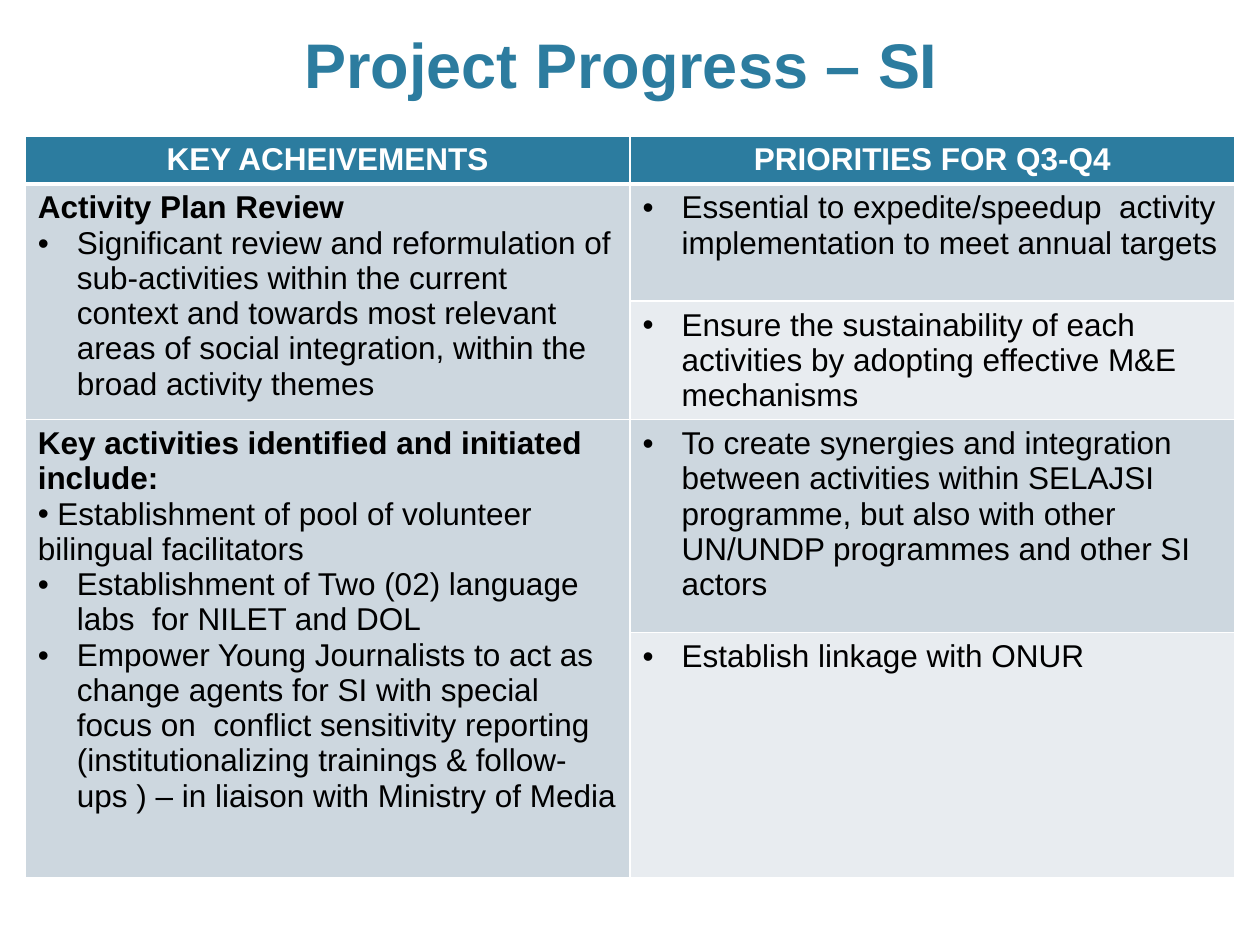
import pptx
import pptx.dml.color
import pptx.enum.text
import pptx.oxml
import pptx.util
from lxml import etree
from pptx.oxml.ns import qn
from pptx.util import Inches

FONT = "Arial"
TEAL, WHITE, BLACK = "2C7C9F", "FFFFFF", "000000"
DARK_BAND, LIGHT_BAND = "CDD7DF", "E8ECF0"
HANGING = 0.31
ALIGN = pptx.enum.text.PP_ALIGN

TITLE = "Project Progress – SI "
HEADINGS = ["KEY ACHEIVEMENTS", "PRIORITIES FOR Q3-Q4"]
ROW_HEIGHTS = [0.37, 0.93, 0.93, 1.69, 1.95]

# Each achievement: bold heading, then (text, hanging indent) bullets
ACHIEVEMENTS = [
    ("Activity Plan Review", [
        ("Significant review and reformulation of sub-activities within the "
         "current context and towards most relevant areas of social "
         "integration, within the broad activity themes", HANGING),
    ]),
    ("Key activities identified and initiated include:", [
        (" Establishment of pool of volunteer bilingual facilitators", 0),
        ("Establishment of Two (02) language labs  for NILET and DOL", HANGING),
        ("Empower Young Journalists to act as change agents for SI with "
         "special focus on  conflict sensitivity reporting (institutionalizing "
         "trainings & follow-ups ) – in liaison with Ministry of Media", HANGING),
    ]),
]
PRIORITIES = [
    "Essential to expedite/speedup  activity implementation to meet annual targets",
    "Ensure the sustainability of each activities by adopting effective M&E mechanisms",
    "To create synergies and integration between activities within SELAJSI "
    "programme, but also with other UN/UNDP programmes and other SI actors",
    "Establish linkage with ONUR",
]


def color(value):
    return pptx.dml.color.RGBColor.from_string(value)


def format_para(para, size, ink, bold, align):
    para.alignment = align
    for span in para.runs:
        span.font.name = FONT
        span.font.size = pptx.util.Pt(size)
        span.font.bold = bold
        span.font.color.rgb = color(ink)


def add_bullet(para, indent):
    props = para._p.get_or_add_pPr()
    props.set("marL", str(Inches(indent)))
    props.set("indent", str(-Inches(indent)))
    etree.SubElement(props, qn("a:buFont")).set("typeface", FONT)
    etree.SubElement(props, qn("a:buChar")).set("char", "•")


def style_cell(cell, fill, bottom_width=1):
    props = cell._tc.get_or_add_tcPr()
    for side in ("L", "R", "T", "B"):
        width = bottom_width if side == "B" else 1
        line = etree.SubElement(props, qn(f"a:ln{side}"))
        line.set("w", str(pptx.util.Pt(width)))
        solid = etree.SubElement(line, qn("a:solidFill"))
        etree.SubElement(solid, qn("a:srgbClr")).set("val", WHITE)
    cell.fill.solid()
    cell.fill.fore_color.rgb = color(fill)


def fill_cell(cell, bullets, heading=None):
    lines = ([(heading, None)] if heading else []) + bullets
    frame = cell.text_frame
    frame.text = "\n".join(text for text, _ in lines)
    for para, (_, indent) in zip(frame.paragraphs, lines):
        is_heading = indent is None
        format_para(para, 18, BLACK, is_heading, ALIGN.LEFT)
        if not is_heading:
            add_bullet(para, indent)


def place_title(page, left, top, width, height):
    box = page.shapes.title
    box.left, box.top = Inches(left), Inches(top)
    box.width, box.height = Inches(width), Inches(height)
    frame = box.text_frame
    frame.text = TITLE
    frame.auto_size = pptx.enum.text.MSO_AUTO_SIZE.NONE
    frame.vertical_anchor = pptx.enum.text.MSO_ANCHOR.BOTTOM
    format_para(frame.paragraphs[0], 36, TEAL, True, ALIGN.CENTER)


def place_progress_table(page, left, top, width):
    table = page.shapes.add_table(
        len(ROW_HEIGHTS), len(HEADINGS), Inches(left), Inches(top),
        Inches(width), Inches(sum(ROW_HEIGHTS))).table
    for row, height in zip(table.rows, ROW_HEIGHTS):
        row.height = Inches(height)

    # Header row
    for column, heading in enumerate(HEADINGS):
        cell = table.cell(0, column)
        style_cell(cell, TEAL, bottom_width=3)
        cell.text_frame.text = heading
        format_para(cell.text_frame.paragraphs[0], 18, WHITE, True, ALIGN.CENTER)

    # Priorities: one per row, in alternating bands
    for index, priority in enumerate(PRIORITIES):
        band = LIGHT_BAND if index % 2 else DARK_BAND
        cell = table.cell(index + 1, 1)
        style_cell(cell, band)
        fill_cell(cell, [(priority, HANGING)])

    # Achievements: each spans two rows
    for index, (heading, bullets) in enumerate(ACHIEVEMENTS):
        first = 1 + 2 * index
        cell, lower = table.cell(first, 0), table.cell(first + 1, 0)
        cell.merge(lower)
        for part in (cell, lower):
            style_cell(part, DARK_BAND)
        fill_cell(cell, bullets, heading)


def main():
    deck = pptx.Presentation()
    deck.slide_width, deck.slide_height = Inches(10), Inches(7.5)
    page = deck.slides.add_slide(deck.slide_layouts.get_by_name("Title Only"))
    place_title(page, 0.6, 0.21, 8.8, 0.64)
    place_progress_table(page, 0.2, 1.08, 9.6)
    deck.save("out.pptx")


if __name__ == "__main__":
    main()
